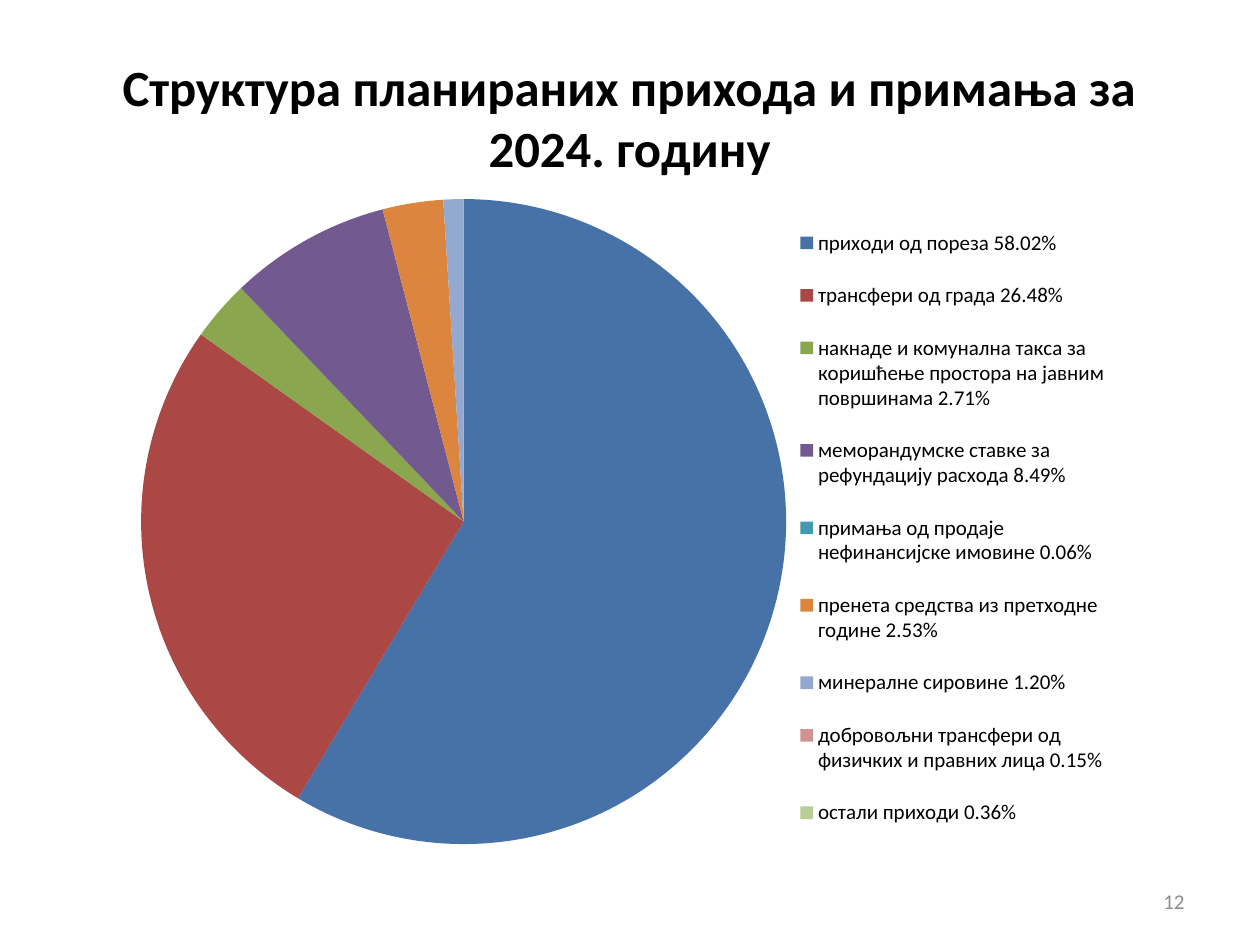
from dataclasses import dataclass

import pptx
import pptx.chart.data
import pptx.dml.color
import pptx.enum.chart
import pptx.enum.text
import pptx.oxml
import pptx.oxml.ns
import pptx.util
from pptx.util import Inches

FONT = "Calibri"
COLORS = {
    "text": "000000",
    "page": "8C8C8C",
    "blue": "4672A8",
    "red": "AB4744",
    "green": "8AA64F",
    "purple": "725990",
    "teal": "4299B0",
    "orange": "DC853E",
    "light blue": "93A9CF",
    "pink": "D19392",
    "light green": "B9CD96",
}


@dataclass
class Box:
    left: float
    top: float
    width: float
    height: float

    def lengths(self) -> list:
        return [Inches(v) for v in (self.left, self.top, self.width, self.height)]


@dataclass
class Revenue:
    label: str
    percent: float
    color: str


@dataclass
class Caption:
    text: str
    box: Box
    size: float
    color: str
    align: pptx.enum.text.PP_ALIGN
    bold: bool = False


CHART_BOX = Box(0.98, 1.39, 8.01, 5.51)
PIE_BOX = Box(1.12, 1.58, 5.12, 5.12)
LEGEND_BOX = Box(6.24, 1.61, 2.64, 5.16)

REVENUES = [
    Revenue("приходи од пореза", 58.02, "blue"),
    Revenue("трансфери од града", 26.48, "red"),
    Revenue("накнаде и комунална такса за коришћење простора на јавним површинама",
            2.71, "green"),
    Revenue("меморандумске ставке за рефундацију расхода", 8.49, "purple"),
    Revenue("примања од продаје нефинансијске имовине", 0.06, "teal"),
    Revenue("пренета средства из претходне године", 2.53, "orange"),
    Revenue("минералне сировине", 1.20, "light blue"),
    Revenue("добровољни трансфери од физичких и правних лица", 0.15, "pink"),
    Revenue("остали приходи", 0.36, "light green"),
]

CAPTIONS = [
    Caption("Структура планираних прихода и примања за 2024. годину",
            Box(0.5, 0.3, 9, 1.25), 29, "text", pptx.enum.text.PP_ALIGN.CENTER, True),
    Caption("12", Box(7.17, 6.95, 2.33, 0.4), 12, "page",
            pptx.enum.text.PP_ALIGN.RIGHT),
]


def rgb(name: str) -> pptx.dml.color.RGBColor:
    return pptx.dml.color.RGBColor.from_string(COLORS[name])


def set_font(font, size: float, color: str, bold: bool = False) -> None:
    font.name = FONT
    font.size = pptx.util.Pt(size)
    font.bold = bold
    font.color.rgb = rgb(color)


def add_caption(slide, caption: Caption) -> None:
    tf = slide.shapes.add_textbox(*caption.box.lengths()).text_frame
    tf.word_wrap = True
    tf.vertical_anchor = pptx.enum.text.MSO_ANCHOR.MIDDLE
    p = tf.paragraphs[0]
    p.alignment = caption.align
    r = p.add_run()
    r.text = caption.text
    set_font(r.font, caption.size, caption.color, caption.bold)


def layout_xml(box: Box, frame: Box, inner: bool):
    """Return a manual layout that puts a slide box inside the chart frame."""
    target = '<c:layoutTarget val="inner"/>' if inner else ""
    return pptx.oxml.parse_xml(
        f'<c:layout {pptx.oxml.ns.nsdecls("c")}><c:manualLayout>{target}'
        '<c:xMode val="edge"/><c:yMode val="edge"/>'
        f'<c:x val="{(box.left - frame.left) / frame.width}"/>'
        f'<c:y val="{(box.top - frame.top) / frame.height}"/>'
        f'<c:w val="{box.width / frame.width}"/>'
        f'<c:h val="{box.height / frame.height}"/>'
        '</c:manualLayout></c:layout>')


def add_revenue_pie(slide, revenues: list[Revenue], frame: Box) -> None:
    """Add a pie of whole percents; the legend gives the exact shares."""
    data = pptx.chart.data.CategoryChartData(number_format="0")
    data.categories = [f"{rev.label} {rev.percent:.2f}%" for rev in revenues]
    data.add_series("Series 1", [round(rev.percent) for rev in revenues])
    chart = slide.shapes.add_chart(
        pptx.enum.chart.XL_CHART_TYPE.PIE, *frame.lengths(), data).chart
    chart.has_title = False
    set_font(chart.font, 18, "text")

    chart.has_legend = True
    chart.legend.position = pptx.enum.chart.XL_LEGEND_POSITION.RIGHT
    chart.legend.include_in_layout = False
    set_font(chart.legend.font, 12, "text")

    plot = chart.plots[0]
    plot.vary_by_categories = True
    for i, rev in enumerate(revenues):
        fill = plot.series[0].points[i].format.fill
        fill.solid()
        fill.fore_color.rgb = rgb(rev.color)

    for layout in chart.element.xpath("c:chart/*/c:layout"):
        layout.getparent().remove(layout)
    plot_area = chart.element.xpath("c:chart/c:plotArea")[0]
    plot_area.insert(0, layout_xml(PIE_BOX, frame, True))
    legend_pos = chart.element.xpath("c:chart/c:legend/c:legendPos")[0]
    legend_pos.addnext(layout_xml(LEGEND_BOX, frame, False))


def main() -> None:
    prs = pptx.Presentation()
    prs.slide_width, prs.slide_height = Inches(10), Inches(7.5)
    s = prs.slides.add_slide(prs.slide_layouts[6])
    for caption in CAPTIONS:
        add_caption(s, caption)
    add_revenue_pie(s, REVENUES, CHART_BOX)
    prs.save("out.pptx")


if __name__ == "__main__":
    main()
